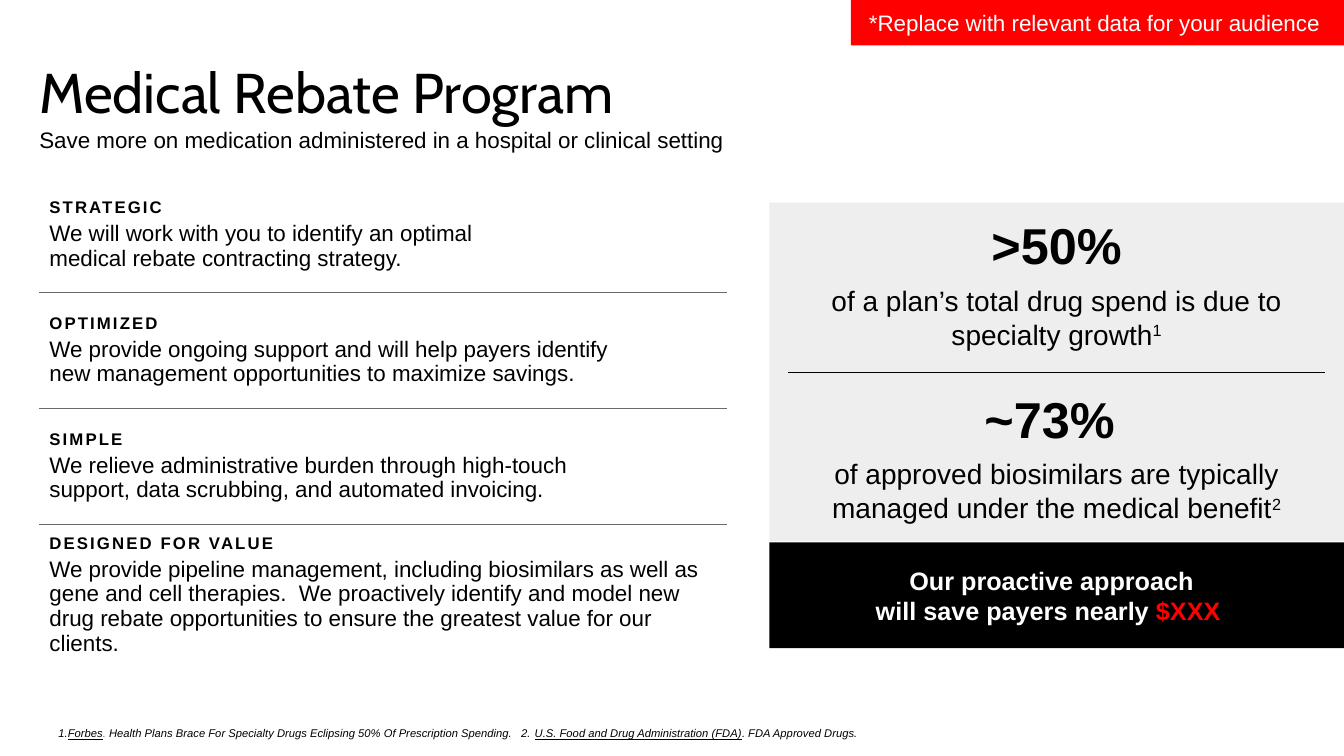
from dataclasses import dataclass

from lxml.etree import SubElement
from pptx import Presentation
from pptx.dml.color import RGBColor
from pptx.enum.shapes import MSO_CONNECTOR, MSO_SHAPE
from pptx.enum.text import MSO_ANCHOR, PP_ALIGN
from pptx.oxml import parse_xml
from pptx.oxml.ns import nsdecls, qn
from pptx.util import Inches, Pt


@dataclass(frozen=True)
class Theme:
    title_font: str = "Cabin"
    body_font: str = "Arial"
    black: str = "000000"
    white: str = "FFFFFF"
    red: str = "FF0000"
    blue: str = "3366CC"
    panel: str = "EAEAEA"
    rule: str = "6A6A6A"
    title: int = 40
    figure: int = 36
    statement: int = 20
    callout: int = 18
    body: int = 16
    label: int = 12
    note: int = 8


THEME = Theme()
BENEFITS = [
    ("STRATEGIC", "We will work with you to identify an optimal \v"
     "medical rebate contracting strategy."),
    ("OPTIMIZED", "We provide ongoing support and will help payers identify\v"
     "new management opportunities to maximize savings."),
    ("SIMPLE", "We relieve administrative burden through high-touch \v"
     "support, data scrubbing, and automated invoicing."),
    ("DESIGNED FOR VALUE", "We provide pipeline management, including biosimilars as well as "
     "gene and cell therapies.  We proactively identify and model new drug rebate "
     "opportunities to ensure the greatest value for our clients."),
]


def write(paragraph, text, size, color=THEME.black, font=THEME.body_font,
          bold=False, italic=False, underline=False):
    """Append text to a paragraph and return the runs it adds."""
    if paragraph.runs:
        run = paragraph.add_run()
        run.text = text
        runs = [run]
    else:
        paragraph.text = text
        runs = paragraph.runs
        paragraph.font.size = Pt(size)
    for run in runs:
        run.font.name, run.font.size = font, Pt(size)
        run.font.bold, run.font.italic, run.font.underline = bold, italic, underline
        run.font.color.rgb = RGBColor.from_string(color)
    return runs


def set_frame(text_frame, insets, anchor):
    text_frame.word_wrap = True
    text_frame.vertical_anchor = anchor
    (text_frame.margin_left, text_frame.margin_top,
     text_frame.margin_right, text_frame.margin_bottom) = map(Inches, insets)


def add_text(slide, box, insets=(0, 0, 0, 0), anchor=MSO_ANCHOR.TOP):
    text_frame = slide.shapes.add_textbox(*map(Inches, box)).text_frame
    set_frame(text_frame, insets, anchor)
    return text_frame


def add_block(slide, box, color, insets=(0, 0, 0, 0)):
    shape = slide.shapes.add_shape(MSO_SHAPE.RECTANGLE, *map(Inches, box))
    shape.shadow.inherit = False
    shape.fill.solid()
    shape.fill.fore_color.rgb = RGBColor.from_string(color)
    shape.line.fill.background()
    set_frame(shape.text_frame, insets, MSO_ANCHOR.MIDDLE)
    shape.text_frame.paragraphs[0].alignment = PP_ALIGN.CENTER
    return shape


def add_header(slide, left, top):
    title = add_text(slide, (left, top, 8.3, 0.6))
    write(title.paragraphs[0], "Medical Rebate Program", THEME.title, font=THEME.title_font)
    subtitle = add_text(slide, (left, top + 0.63, 10.51, 0.37), (0, 0.05, 0, 0.05))
    write(subtitle.paragraphs[0],
          "Save more on medication administered in a hospital or clinical setting", THEME.body)


def set_borders(cell, top, bottom):
    """Rule the cell on the chosen horizontal sides only."""
    properties = cell._tc.get_or_add_tcPr()
    sides = {"lnL": False, "lnR": False, "lnT": top, "lnB": bottom}
    for index, (side, ruled) in enumerate(sides.items()):
        fill = (f'<a:solidFill><a:srgbClr val="{THEME.rule}"/></a:solidFill>'
                if ruled else "<a:noFill/>")
        properties.insert(index, parse_xml(
            f'<a:{side} {nsdecls("a")} w="{Pt(1)}">{fill}</a:{side}>'))


def add_benefits(slide, left, top, width, row_height):
    count = len(BENEFITS)
    table = slide.shapes.add_table(count, 1, *map(
        Inches, (left, top, width, row_height * count))).table
    table.first_row = table.horz_banding = False
    for row, (label, description) in enumerate(BENEFITS):
        cell = table.cell(row, 0)
        cell.fill.background()
        cell.vertical_anchor = MSO_ANCHOR.MIDDLE
        set_borders(cell, top=row > 0, bottom=row < count - 1)
        heading = cell.text_frame.paragraphs[0]
        heading.space_after = Pt(3)
        for run in write(heading, label, THEME.label, bold=True):
            run.font._element.set("spc", "150")
        detail = cell.text_frame.add_paragraph()
        detail.space_after = Pt(3 if row == 0 else 6)
        write(detail, description, THEME.body)


def add_statistic(slide, box, figure, statement, note):
    text_frame = add_text(slide, box, (0.1, 0.05, 0.1, 0.05))
    headline = text_frame.paragraphs[0]
    headline.space_after = Pt(6)
    write(headline, figure, THEME.figure, bold=True)
    detail = text_frame.add_paragraph()
    detail.space_after = Pt(3)
    write(detail, statement, THEME.statement)
    for run in write(detail, note, THEME.statement):
        run.font._element.set("baseline", "30000")
    for paragraph in text_frame.paragraphs:
        paragraph.alignment = PP_ALIGN.CENTER


def add_statistics_panel(slide, left, top, width, height):
    # Translucent panel
    panel = add_block(slide, (left, top, width, height), THEME.panel)
    color = panel.fill._xPr.find(qn("a:solidFill"))[0]
    SubElement(color, qn("a:alpha")).set("val", "80000")
    # Two figures with a rule between them
    add_statistic(slide, (left + 0.23, top + 0.07, 5.24, 1.46), ">50%",
                  "of a plan’s total drug spend is due to specialty growth", "1")
    add_statistic(slide, (left + 0.27, top + 1.79, 5.16, 1.46), "~73% ",
                  "of approved biosimilars are typically managed under the medical benefit", "2")
    middle = top + height / 2
    rule = slide.shapes.add_connector(MSO_CONNECTOR.STRAIGHT, *map(
        Inches, (left + 0.19, middle, left + width - 0.19, middle)))
    rule.line.color.rgb = RGBColor.from_string(THEME.black)
    rule.line.width = Pt(0.5)
    SubElement(rule._element.spPr, qn("a:effectLst"))


def add_callout(slide, box):
    callout = add_block(slide, box, THEME.black, (0.3, 0.05, 0.4, 0.05))
    paragraph = callout.text_frame.paragraphs[0]
    write(paragraph, "Our proactive approach\vwill save payers nearly",
          THEME.callout, THEME.white, bold=True)
    write(paragraph, " $XXX ", THEME.callout, THEME.red, bold=True)


def add_banner(slide, box):
    banner = add_block(slide, box, THEME.red)
    write(banner.text_frame.paragraphs[0], "*Replace with relevant data for your audience ",
          THEME.body, THEME.white)


def add_sources(slide, box):
    paragraph = add_text(slide, box, anchor=MSO_ANCHOR.BOTTOM).paragraphs[0]
    paragraph.space_after = Pt(6)
    for text, color, underline in [
        ("1.", THEME.black, False),
        ("Forbes", THEME.black, True),
        (".", THEME.blue, False),
        (" Health Plans Brace For Specialty Drugs Eclipsing 50% Of Prescription Spending.   2. ",
         THEME.black, False),
        ("U.S. Food and Drug Administration (FDA)", THEME.black, True),
        (". FDA Approved Drugs.", THEME.black, False),
    ]:
        write(paragraph, text, THEME.note, color, italic=True, underline=underline)


def main():
    presentation = Presentation()
    presentation.slide_width, presentation.slide_height = Inches(13.33), Inches(7.5)
    slide = presentation.slides.add_slide(presentation.slide_layouts[6])
    add_header(slide, 0.39, 0.57)
    add_benefits(slide, 0.39, 1.75, 6.82, 1.15)
    add_statistics_panel(slide, 7.63, 2.01, 5.7, 3.36)
    add_callout(slide, (7.63, 5.38, 5.7, 1.05))
    add_banner(slide, (8.44, 0, 4.89, 0.45))
    add_sources(slide, (0.58, 7, 9.06, 0.34))
    presentation.save("out.pptx")


if __name__ == "__main__":
    main()
